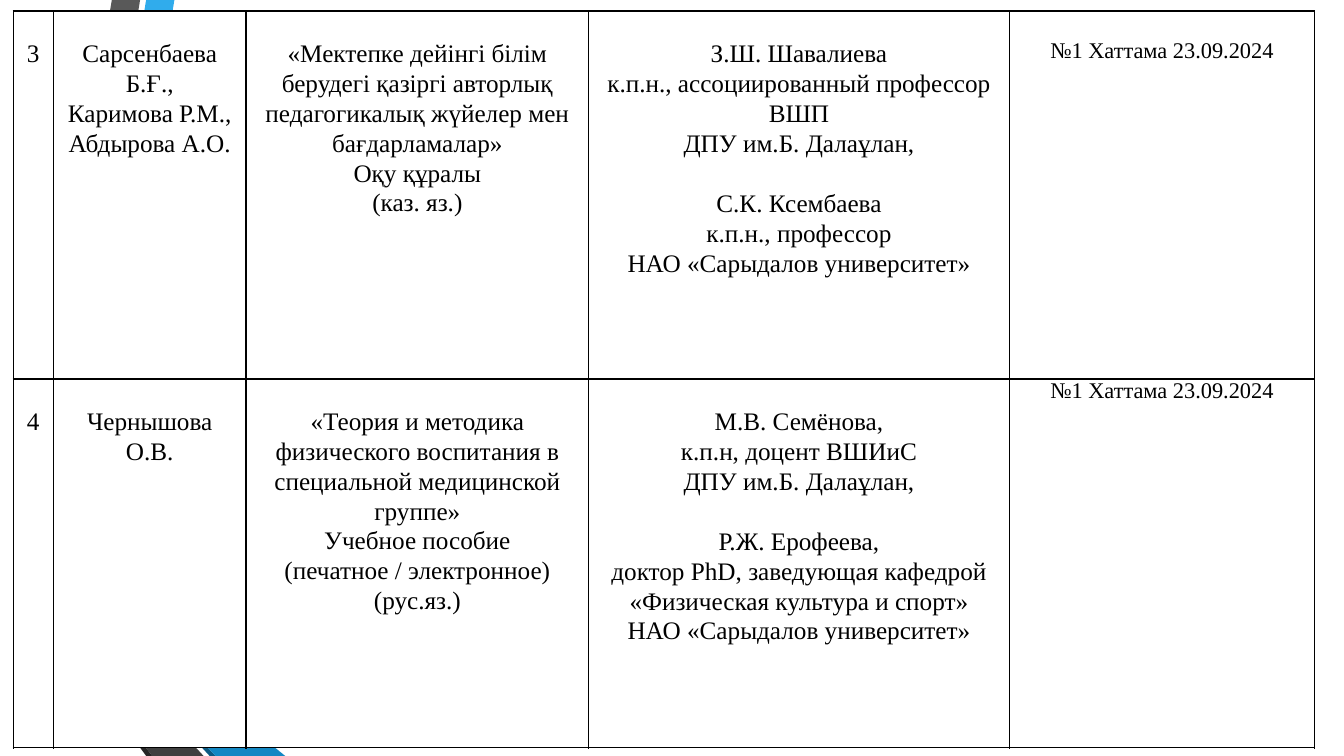
from dataclasses import dataclass

from lxml import etree
from pptx import Presentation
from pptx.dml.color import RGBColor
from pptx.enum.text import MSO_ANCHOR, PP_ALIGN
from pptx.oxml.ns import qn
from pptx.slide import Slide
from pptx.table import Table, _Cell
from pptx.util import Inches, Pt

CENTER = PP_ALIGN.CENTER
TOP = MSO_ANCHOR.TOP


@dataclass(frozen=True)
class Theme:
    font: str = "Times New Roman"
    body: int = 18
    protocol: int = 16
    spacing: float = 1.07
    top: float = 0.27
    gap: float = 0.3
    border: int = 1
    ink: str = "000000"
    paper: str = "FFFFFF"


@dataclass(frozen=True)
class Ribbon:
    color: str
    points: tuple[tuple[float, float], ...]


@dataclass(frozen=True)
class Entry:
    groups: tuple[tuple[str, ...], ...]
    size: int
    spacing: float
    top: float
    side: float = 0.07


THEME = Theme()

RIBBONS = (
    Ribbon("30ACEC", ((0.5, 5.78), (0.77, 5.83), (1.73, 0), (1.45, 0))),
    Ribbon("595959", ((1.39, 0), (1.11, 0), (0.16, 5.73), (0.44, 5.77))),
    Ribbon("262626", ((0.16, 5.73), (1.45, 7.5), (1.51, 7.5))),
    Ribbon("0C5A82", ((0.5, 5.79), (2.08, 7.5), (2.14, 7.5))),
    Ribbon("1287C3", ((0.5, 5.79), (2.14, 7.5), (2.83, 7.5), (0.77, 5.83), (0.5, 5.78))),
    Ribbon("404040", ((2.02, 7.5), (0.48, 5.83), (0.43, 5.77), (0.16, 5.73), (1.51, 7.5))),
)


def body(*groups: tuple[str, ...], side: float = 0.07) -> Entry:
    return Entry(groups, THEME.body, THEME.spacing, THEME.top, side)


def number(text: str) -> Entry:
    return body((text,), side=0.03)


def protocol(top: float) -> Entry:
    return Entry((("№1 Хаттама 23.09.2024",),), THEME.protocol, 1.0, top)


INSTITUTE = "ДПУ им.Б. Далаұлан,"
UNIVERSITY = "НАО «Сарыдалов университет»"
COLUMNS = (0.4, 1.91, 3.4, 4.17, 3.03)
ROWS = (3.65, 3.66)
ENTRIES = (
    (
        number("3"),
        body(("Сарсенбаева Б.Ғ.,", "Каримова Р.М.,", "Абдырова А.О.")),
        body((
            "«Мектепке дейінгі білім берудегі қазіргі авторлық педагогикалық жүйелер мен бағдарламалар»",
            "Оқу құралы",
            "(каз. яз.)",
        )),
        body(
            ("З.Ш. Шавалиева", "к.п.н., ассоциированный профессор ВШП", INSTITUTE),
            ("С.К. Ксембаева", "к.п.н., профессор", UNIVERSITY),
        ),
        protocol(THEME.top),
    ),
    (
        number("4"),
        body(("Чернышова О.В.",)),
        body((
            "«Теория и методика физического воспитания в специальной медицинской группе»",
            "Учебное пособие",
            "(печатное / электронное)",
            "(рус.яз.)",
        )),
        body(
            ("М.В. Семёнова,", "к.п.н, доцент ВШИиС", INSTITUTE),
            (
                "Р.Ж. Ерофеева,",
                "доктор PhD, заведующая кафедрой «Физическая культура и спорт»",
                UNIVERSITY,
            ),
        ),
        protocol(0),
    ),
)


def add_ribbon(s: Slide, ribbon: Ribbon) -> None:
    points = [(Inches(x), Inches(y)) for x, y in ribbon.points]
    builder = s.shapes.build_freeform(*points[0])
    builder.add_line_segments(points[1:], close=True)
    shape = builder.convert_to_shape()
    shape.shadow.inherit = False
    shape.fill.solid()
    shape.fill.fore_color.rgb = RGBColor.from_string(ribbon.color)
    shape.line.fill.background()


def set_borders(cell: _Cell) -> None:
    props = cell._tc.get_or_add_tcPr()
    for i, side in enumerate(("a:lnL", "a:lnR", "a:lnT", "a:lnB")):
        ln = etree.Element(qn(side), w=str(Pt(THEME.border)))
        fill = etree.SubElement(ln, qn("a:solidFill"))
        etree.SubElement(fill, qn("a:srgbClr"), val=THEME.ink)
        props.insert(i, ln)


def fill_cell(cell: _Cell, entry: Entry) -> None:
    cell.fill.solid()
    cell.fill.fore_color.rgb = RGBColor.from_string(THEME.paper)
    cell.margin_left = cell.margin_right = Inches(entry.side)
    cell.margin_top = Inches(entry.top)
    cell.margin_bottom = 0
    cell.vertical_anchor = TOP
    set_borders(cell)
    tf = cell.text_frame
    tf.text = "\n".join(line for group in entry.groups for line in group)
    for p in tf.paragraphs:
        p.alignment = CENTER
        p.line_spacing = entry.spacing
        for r in p.runs:
            r.font.name = THEME.font
            r.font.size = Pt(entry.size)
            r.font.color.rgb = RGBColor.from_string(THEME.ink)
    start = 0
    for group in entry.groups[:-1]:
        start += len(group)
        tf.paragraphs[start].space_before = Inches(THEME.gap)


def add_publications(s: Slide) -> Table:
    frame = s.shapes.add_table(
        len(ROWS), len(COLUMNS),
        Inches(0.13), Inches(0.11), Inches(sum(COLUMNS)), Inches(sum(ROWS)),
    )
    table = frame.table
    table.first_row = False
    table.horz_banding = False
    for column, width in zip(table.columns, COLUMNS):
        column.width = Inches(width)
    for row, height, entries in zip(table.rows, ROWS, ENTRIES):
        row.height = Inches(height)
        for cell, entry in zip(row.cells, entries):
            fill_cell(cell, entry)
    return table


def main() -> None:
    prs = Presentation()
    prs.slide_width = Inches(13.33)
    prs.slide_height = Inches(7.5)
    s = prs.slides.add_slide(prs.slide_layouts[6])
    for ribbon in RIBBONS:
        add_ribbon(s, ribbon)
    add_publications(s)
    prs.save("out.pptx")


if __name__ == "__main__":
    main()
